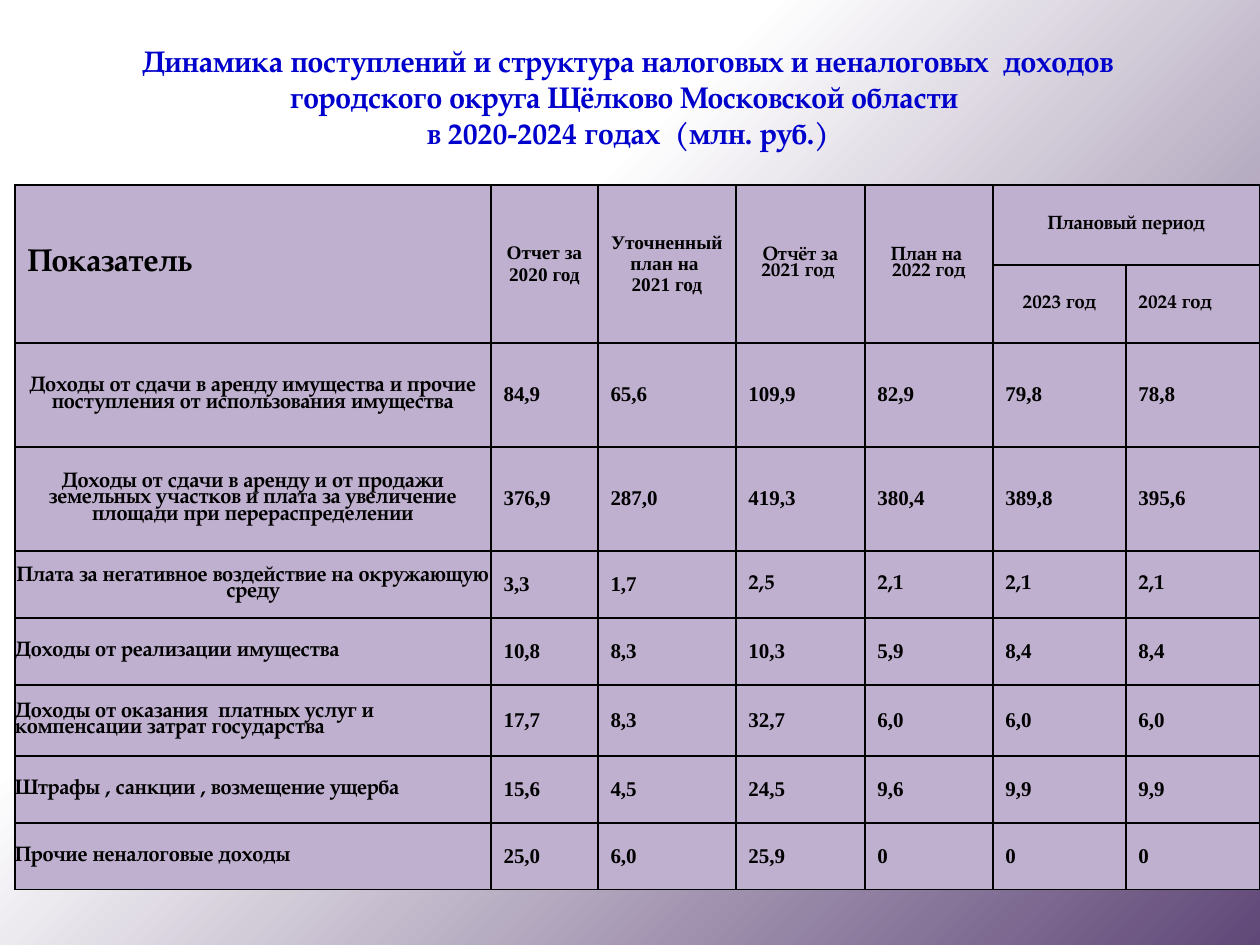
from copy import deepcopy
from dataclasses import dataclass

from pptx import Presentation
from pptx.dml.color import RGBColor
from pptx.enum.text import MSO_ANCHOR, PP_ALIGN
from pptx.oxml.ns import qn
from pptx.oxml.xmlchemy import OxmlElement
from pptx.util import Emu, Pt

MIDDLE = MSO_ANCHOR.MIDDLE
LEFT, CENTER = PP_ALIGN.LEFT, PP_ALIGN.CENTER
EMU_PER_PX = 914400 / 126


@dataclass(frozen=True)
class Theme:
    """Colours, fonts and type sizes of the slide."""
    white: str = "FFFFFF"
    purple: str = "604878"
    cell: str = "BFB0CF"
    ink: str = "000000"
    title: str = "0000CC"
    serif: str = "TeX Gyre Pagella"
    roman: str = "Times New Roman"
    title_size: int = 17
    lead_size: int = 18
    head_size: int = 11
    body_size: int = 12
    border: int = 1


THEME = Theme()
TITLE = [
    "Динамика поступлений и структура налоговых и неналоговых  доходов",
    "городского округа Щёлково Московской области ",
    "в 2020-2024 годах  (млн. руб.)",
]
COLUMNS = [476, 107, 138, 129, 128, 133, 134]
ROWS = [80, 78, 104, 104, 67, 67, 71, 67, 67]
HEADER = [
    (0, 1, ["Отчет за 2020 год"], THEME.roman, CENTER),
    (0, 2, ["Уточненный план на ", "2021 год"], THEME.roman, CENTER),
    (0, 3, ["Отчёт за", "2021 год "], THEME.serif, CENTER),
    (0, 4, ["План на ", "2022 год"], THEME.serif, CENTER),
    (0, 5, ["Плановый период"], THEME.serif, CENTER),
    (1, 5, ["2023 год"], THEME.serif, CENTER),
    (1, 6, ["2024 год"], THEME.serif, LEFT),
]
INCOME = [
    ("Доходы от сдачи в аренду имущества и прочие поступления от использования имущества",
     CENTER, "84,9 65,6 109,9 82,9 79,8 78,8"),
    ("Доходы от сдачи в аренду и от продажи земельных участков и плата за увеличение "
     "площади при перераспределении", CENTER, "376,9 287,0 419,3 380,4 389,8 395,6"),
    ("Плата за негативное воздействие на окружающую среду",
     CENTER, "3,3 1,7 2,5 2,1 2,1 2,1"),
    ("Доходы от реализации имущества", LEFT, "10,8 8,3 10,3 5,9 8,4 8,4"),
    ("Доходы от оказания  платных услуг и компенсации затрат государства",
     LEFT, "17,7 8,3 32,7 6,0 6,0 6,0"),
    ("Штрафы , санкции , возмещение ущерба", LEFT, "15,6 4,5 24,5 9,6 9,9 9,9"),
    ("Прочие неналоговые доходы", LEFT, "25,0 6,0 25,9 0 0 0"),
]
SERIF_VALUES = {(4, col) for col in range(3, 7)}


def px(n):
    """Turn pixels into EMU."""
    return Emu(round(n * EMU_PER_PX))


def write(tf, lines, size, font, color, align, spacing=None):
    """Write bold paragraphs into a text frame."""
    for i, line in enumerate(lines):
        p = tf.paragraphs[0] if i == 0 else tf.add_paragraph()
        p.alignment = align
        if spacing:
            p.line_spacing = spacing
        r = p.add_run()
        r.text = line
        r.font.size = Pt(size)
        r.font.name = font
        r.font.bold = True
        r.font.color.rgb = RGBColor.from_string(color)


def paint_background(s):
    """Fill the slide with a diagonal gradient that stays white for a third."""
    fill = s.background.fill
    fill.gradient()
    fill.gradient_angle = 315
    stop_list = s.element.find(".//" + qn("a:gsLst"))
    stop_list.insert(0, deepcopy(stop_list[0]))
    stops = [(0, THEME.white), (0.35, THEME.white), (1, THEME.purple)]
    for stop, (position, color) in zip(fill.gradient_stops, stops):
        stop.position = position
        stop.color.rgb = RGBColor.from_string(color)


def add_title(s):
    """Add the centred title."""
    tf = s.shapes.add_textbox(px(-2), px(37), px(1260), px(121)).text_frame
    tf.word_wrap = True
    write(tf, TITLE, THEME.title_size, THEME.serif, THEME.title, CENTER)


def style_cell(cell):
    """Give a cell its fill, anchor and four borders."""
    cell.vertical_anchor = MIDDLE
    tc_pr = cell._tc.get_or_add_tcPr()
    for side in ("L", "R", "T", "B"):
        ln = OxmlElement(f"a:ln{side}")
        ln.set("w", str(Pt(THEME.border)))
        solid = OxmlElement("a:solidFill")
        color = OxmlElement("a:srgbClr")
        color.set("val", THEME.ink)
        solid.append(color)
        ln.append(solid)
        tc_pr.append(ln)
    cell.fill.solid()
    cell.fill.fore_color.rgb = RGBColor.from_string(THEME.cell)


def add_grid(s):
    """Add the styled empty table with its merged header cells."""
    frame = s.shapes.add_table(len(ROWS), len(COLUMNS), px(15), px(185),
                               px(sum(COLUMNS)), px(sum(ROWS)))
    table = frame.table
    table.first_row = table.horz_banding = False
    for column, width in zip(table.columns, COLUMNS):
        column.width = px(width)
    for row, height in zip(table.rows, ROWS):
        row.height = px(height)
    for cell in table.iter_cells():
        style_cell(cell)
    for col in range(5):
        table.cell(0, col).merge(table.cell(1, col))
    table.cell(0, 5).merge(table.cell(0, 6))
    return table


def fill_header(table):
    """Write the column headings."""
    write(table.cell(0, 0).text_frame, ["Показатель"], THEME.lead_size,
          THEME.serif, THEME.ink, LEFT)
    for row, col, lines, font, align in HEADER:
        spacing = 0.85 if font == THEME.serif else None
        write(table.cell(row, col).text_frame, lines, THEME.head_size, font,
              THEME.ink, align, spacing)


def fill_income(table):
    """Write the income labels and their yearly values."""
    for row, (label, align, values) in enumerate(INCOME, start=2):
        cell = table.cell(row, 0)
        cell.margin_left = cell.margin_right = 0
        cell.margin_top = cell.margin_bottom = 0
        write(cell.text_frame, [label], THEME.body_size, THEME.serif,
              THEME.ink, align, 0.8)
        for col, value in enumerate(values.split(), start=1):
            font = THEME.serif if (row, col) in SERIF_VALUES else THEME.roman
            write(table.cell(row, col).text_frame, [value], THEME.body_size,
                  font, THEME.ink, LEFT)


def main():
    """Build and save the slide."""
    prs = Presentation()
    prs.slide_width, prs.slide_height = px(1260), px(945)
    s = prs.slides.add_slide(prs.slide_layouts[6])
    paint_background(s)
    table = add_grid(s)
    fill_header(table)
    fill_income(table)
    add_title(s)
    prs.save("out.pptx")


if __name__ == "__main__":
    main()
